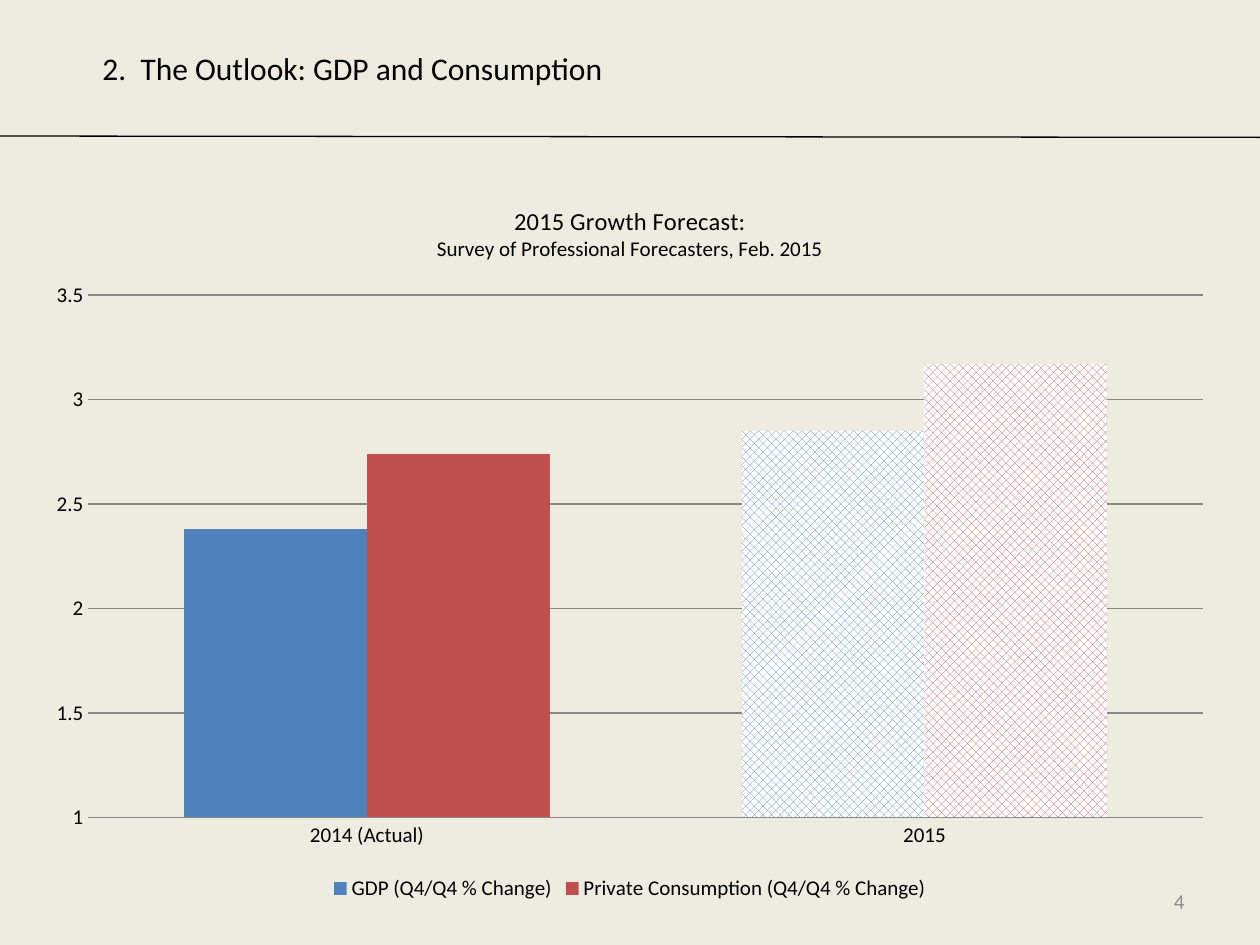
from lxml.etree import SubElement
from pptx import Presentation
from pptx.chart.data import CategoryChartData
from pptx.dml.color import RGBColor
from pptx.enum.chart import XL_CHART_TYPE, XL_LEGEND_POSITION, XL_TICK_MARK
from pptx.enum.dml import MSO_PATTERN
from pptx.enum.shapes import MSO_CONNECTOR
from pptx.enum.text import MSO_ANCHOR, PP_ALIGN
from pptx.oxml.ns import qn
from pptx.util import Pt

FONT = "Calibri"
BLACK = RGBColor(0x00, 0x00, 0x00)
WHITE = RGBColor(0xFF, 0xFF, 0xFF)
CREAM = RGBColor(0xEE, 0xEC, 0xE1)
BLUE = RGBColor(0x4F, 0x81, 0xBD)
RED = RGBColor(0xC0, 0x50, 0x4D)
GRID_GREY = RGBColor(0x87, 0x87, 0x87)
NUMBER_GREY = RGBColor(0x8C, 0x8C, 0x8C)

YEARS = ["2014 (Actual)", "2015"]
FORECASTS = [
    ("GDP (Q4/Q4 % Change)", [2.38, 2.85], BLUE),
    ("Private Consumption (Q4/Q4 % Change)", [2.74, 3.17], RED),
]
CHART_TITLE = [
    ("2015 Growth Forecast:", 14),
    ("Survey of Professional Forecasters, Feb. 2015", 12),
]


def style_font(font, size, color=BLACK):
    font.name = FONT
    font.size = Pt(size)
    font.bold = False
    font.color.rgb = color


def add_run(paragraph, text, size, color=BLACK):
    run = paragraph.add_run()
    run.text = text
    style_font(run.font, size, color)


def add_heading(slide, left, top, width, height):
    heading = slide.shapes.title
    heading.left, heading.top = Pt(left), Pt(top)
    heading.width, heading.height = Pt(width), Pt(height)
    frame = heading.text_frame
    frame.vertical_anchor = MSO_ANCHOR.MIDDLE
    frame.margin_left = Pt(34.5)
    paragraph = frame.paragraphs[0]
    paragraph.alignment = PP_ALIGN.LEFT
    add_run(paragraph, "2.  The Outlook: GDP and Consumption", 18)


def add_rule(slide, left, top, width, height):
    rule = slide.shapes.add_connector(
        MSO_CONNECTOR.STRAIGHT, Pt(left), Pt(top), Pt(left + width), Pt(top + height))
    rule.line.color.rgb = BLACK
    rule.line.width = Pt(0.75)
    SubElement(rule._element.spPr, qn("a:effectLst"))


def style_axes(chart):
    years, growth = chart.category_axis, chart.value_axis
    for axis in (years, growth):
        axis.major_tick_mark = axis.minor_tick_mark = XL_TICK_MARK.NONE
        style_font(axis.tick_labels.font, 12)
    growth.minimum_scale, growth.maximum_scale = 1, 3.5
    growth.major_unit = 0.5
    growth.format.line.fill.background()
    for line in (years.format.line, growth.major_gridlines.format.line):
        line.color.rgb = GRID_GREY
        line.width = Pt(0.75)


def color_bars(plot):
    """Fill actual figures solid and forecast figures with a pattern."""
    for series, (_, _, color) in zip(plot.series, FORECASTS):
        series.invert_if_negative = False
        series.format.fill.solid()
        series.format.fill.fore_color.rgb = color
        forecast_fill = series.points[1].format.fill
        forecast_fill.patterned()
        forecast_fill.pattern = MSO_PATTERN.PERCENT_50
        forecast_fill.fore_color.rgb = color
        forecast_fill.back_color.rgb = WHITE


def add_forecast_chart(slide, left, top, width, height):
    data = CategoryChartData()
    data.categories = YEARS
    for name, values, _ in FORECASTS:
        data.add_series(name, values)
    chart = slide.shapes.add_chart(
        XL_CHART_TYPE.COLUMN_CLUSTERED, Pt(left), Pt(top), Pt(width), Pt(height), data).chart
    style_font(chart.font, 10)

    title_frame = chart.chart_title.text_frame
    for index, (text, size) in enumerate(CHART_TITLE):
        paragraph = title_frame.add_paragraph() if index else title_frame.paragraphs[0]
        add_run(paragraph, text, size)
    chart.chart_title.include_in_layout = False

    chart.has_legend = True
    chart.legend.position = XL_LEGEND_POSITION.BOTTOM
    chart.legend.include_in_layout = False
    style_font(chart.legend.font, 12)

    plot = chart.plots[0]
    plot.gap_width = 105
    plot.overlap = 0
    plot.vary_by_categories = False
    style_axes(chart)
    color_bars(plot)


def add_page_number(slide, left, top, width, height):
    box = slide.shapes.add_textbox(Pt(left), Pt(top), Pt(width), Pt(height))
    frame = box.text_frame
    frame.word_wrap = True
    frame.vertical_anchor = MSO_ANCHOR.MIDDLE
    paragraph = frame.paragraphs[0]
    paragraph.alignment = PP_ALIGN.RIGHT
    add_run(paragraph, "4", 12, NUMBER_GREY)


def main():
    deck = Presentation()
    deck.slide_width, deck.slide_height = Pt(720), Pt(540)
    slide = deck.slides.add_slide(deck.slide_layouts.get_by_name("Title Only"))
    slide.background.fill.solid()
    slide.background.fill.fore_color.rgb = CREAM

    add_rule(slide, 0, 77.75, 720, 0.75)
    add_heading(slide, 24, 24.5, 684, 29)
    add_forecast_chart(slide, 18.75, 102.25, 682.5, 415.5)
    add_page_number(slide, 516, 500.5, 168, 28.75)
    deck.save("out.pptx")


if __name__ == "__main__":
    main()
